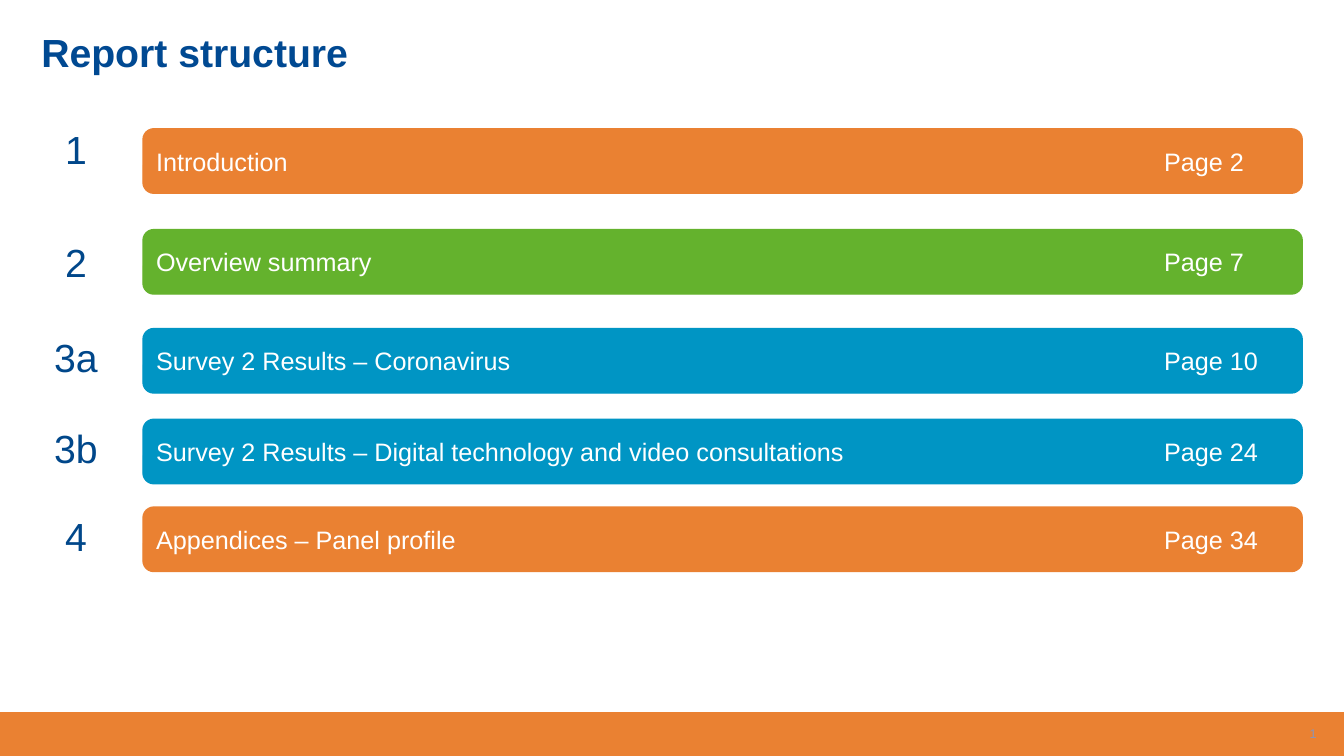
from lxml import etree
from pptx import Presentation
from pptx.dml.color import RGBColor
from pptx.enum import shapes, text
from pptx.oxml import ns
from pptx.util import Pt

ORANGE = RGBColor(0xEA, 0x81, 0x32)
GREEN = RGBColor(0x64, 0xB2, 0x2D)
BLUE = RGBColor(0x00, 0x95, 0xC4)
NAVY = RGBColor(0x00, 0x47, 0x8A)
TITLE_BLUE = RGBColor(0x00, 0x49, 0x92)
GREY = RGBColor(0x8C, 0x95, 0xB6)
WHITE = RGBColor(0xFF, 0xFF, 0xFF)

WIDTH, HEIGHT = 960, 540
BAR_LEFT, BAR_WIDTH, BAR_HEIGHT = 102.2, 828, 46
PAGE_TAB = 720

# number, number top, bar top, section, page, colour
SECTIONS = [
    ("1", 85.7, 92, "Introduction", 2, ORANGE),
    ("2", 167, 164, "Overview summary", 7, GREEN),
    ("3a", 234.7, 234.7, "Survey 2 Results – Coronavirus", 10, BLUE),
    ("3b", 299.5, 299.5,
     "Survey 2 Results – Digital technology and video consultations", 24, BLUE),
    ("4", 362.2, 362.2, "Appendices – Panel profile", 34, ORANGE),
]


def write(shape, content, size=18, color=WHITE, bold=False,
          align=text.PP_ALIGN.LEFT, anchor=text.MSO_ANCHOR.MIDDLE,
          spacing=None, tab=None):
    """Fill a shape with one formatted paragraph; tab is a stop in points."""
    frame = shape.text_frame
    frame.word_wrap = True
    frame.auto_size = text.MSO_AUTO_SIZE.NONE
    frame.vertical_anchor = anchor
    paragraph = frame.paragraphs[0]
    paragraph.alignment = align
    paragraph.line_spacing = spacing
    if tab:
        properties = paragraph._p.get_or_add_pPr()
        stops = etree.SubElement(properties, ns.qn("a:tabLst"))
        etree.SubElement(stops, ns.qn("a:tab"), pos=str(Pt(tab)), algn="l")
    run = paragraph.add_run()
    run.text = content
    font = run.font
    font.name, font.size, font.bold = "Arial", Pt(size), bold
    font.color.rgb = color


class ContentsSlide:
    def __init__(self, presentation):
        layout = presentation.slide_layouts.get_by_name("Title Only")
        self.slide = presentation.slides.add_slide(layout)

    def title(self, content, left, top, width, height):
        shape = self.slide.shapes.title
        shape.left, shape.top = Pt(left), Pt(top)
        shape.width, shape.height = Pt(width), Pt(height)
        frame = shape.text_frame
        frame.margin_left = frame.margin_right = Pt(17.3)
        frame.margin_top = frame.margin_bottom = Pt(3.6)
        write(shape, content, size=28, color=TITLE_BLUE, bold=True,
              anchor=text.MSO_ANCHOR.TOP, spacing=0.9)

    def bar(self, kind, left, top, width, height, color):
        shape = self.slide.shapes.add_shape(
            kind, Pt(left), Pt(top), Pt(width), Pt(height))
        shape.shadow.inherit = False
        shape.fill.solid()
        shape.fill.fore_color.rgb = color
        shape.line.color.rgb = color
        shape.line.width = Pt(1)
        return shape

    def label(self, content, left, top, width, height, **style):
        box = self.slide.shapes.add_textbox(
            Pt(left), Pt(top), Pt(width), Pt(height))
        write(box, content, **style)

    def section(self, number, number_top, bar_top, name, page, color):
        """Add a section number beside its coloured bar."""
        self.label(number, 23, number_top, 62.6, 41, size=28, color=NAVY,
                   align=text.PP_ALIGN.CENTER, anchor=text.MSO_ANCHOR.TOP)
        bar = self.bar(shapes.MSO_SHAPE.ROUNDED_RECTANGLE,
                       BAR_LEFT, bar_top, BAR_WIDTH, BAR_HEIGHT, color)
        write(bar, f"{name}\tPage {page}", tab=PAGE_TAB)


def main():
    presentation = Presentation()
    presentation.slide_width, presentation.slide_height = Pt(WIDTH), Pt(HEIGHT)
    contents = ContentsSlide(presentation)
    contents.title("Report structure", 12.2, 20.2, 924.5, 81.4)
    contents.bar(shapes.MSO_SHAPE.RECTANGLE, 0, 509, WIDTH, 31, ORANGE)
    contents.label("1", 731.5, 509.8, 216, 28.8, size=9, color=GREY,
                   align=text.PP_ALIGN.RIGHT)
    for section in SECTIONS:
        contents.section(*section)
    presentation.save("out.pptx")


if __name__ == "__main__":
    main()
